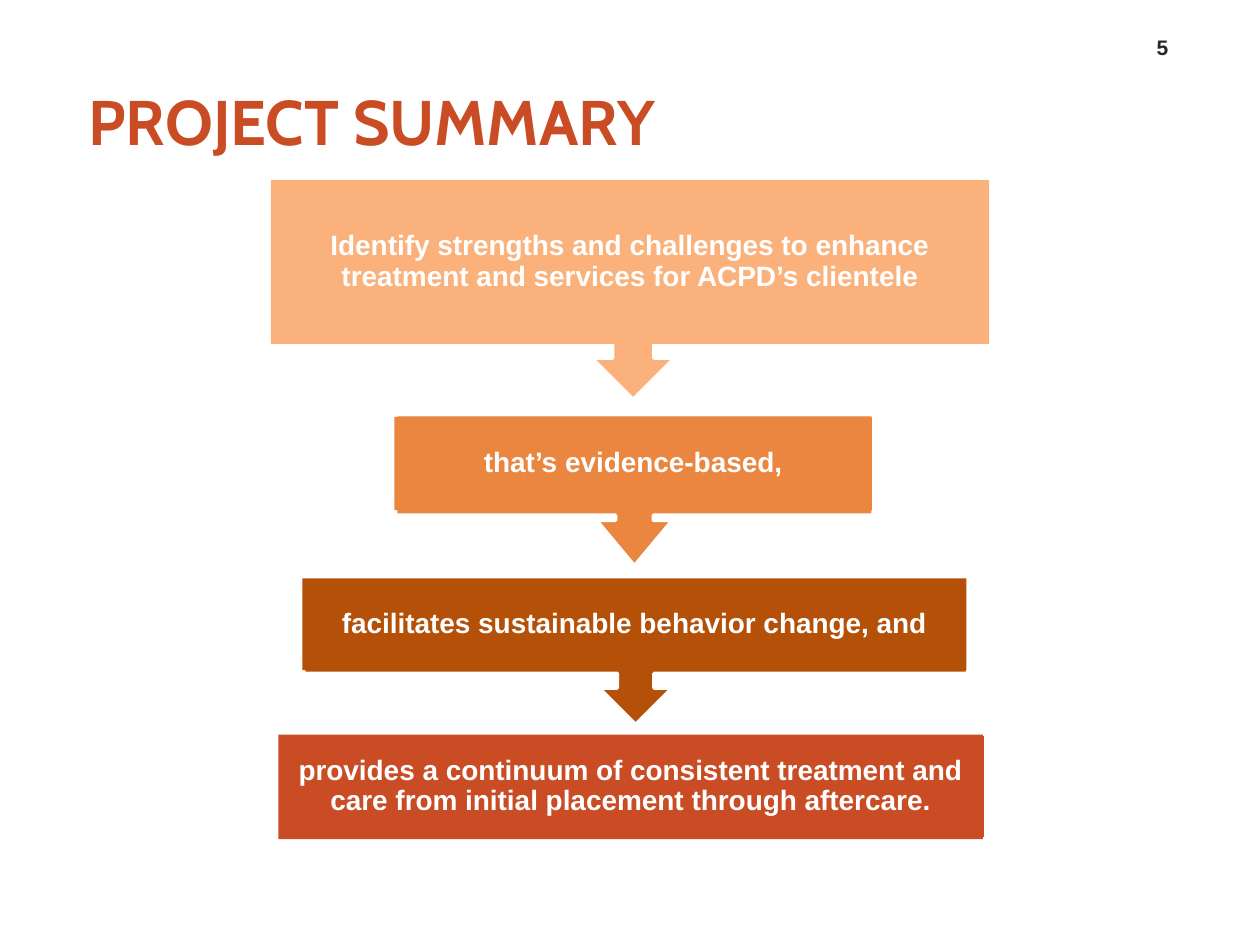
from pptx import Presentation
from pptx.dml.color import RGBColor
from pptx.enum import shapes, text
from pptx.util import Inches, Pt

STEPS = [
    ("provides a continuum of consistent treatment and care from initial placement through aftercare.",
     "C94C25", (2.21, 5.83, 5.59, 0.83), (2.3, 5.83, 5.52, 0.83), None),
    ("facilitates sustainable behavior change, and",
     "B45007", (2.4, 4.59, 5.27, 0.73), (2.41, 4.59, 5.27, 1.16), (0.25, 0.25, 0.25, 0.65)),
    ("that’s evidence-based,",
     "EA8640", (3.13, 3.31, 3.79, 0.74), (3.14, 3.29, 3.79, 1.2), (0.25, 0.25, 0.3, 0.665)),
    ("Identify strengths and challenges to enhance treatment and services for ACPD’s clientele",
     "FAB17B", (2.15, 1.43, 5.7, 1.3), (2.57, 1.86, 4.91, 1.31), (0.25, 0.25, 0.25, 0.65)),
]


def rgb(color):
    """Turn a hex string into a colour."""
    return RGBColor.from_string(color)


def write(sp, words, size, font, color, align, anchor, insets):
    """Fill a shape with one bold paragraph and return it."""
    tf = sp.text_frame
    tf.word_wrap = True
    tf.vertical_anchor = anchor
    tf.margin_left = tf.margin_right = Inches(insets[0])
    tf.margin_top = tf.margin_bottom = Inches(insets[1])
    p = tf.paragraphs[0]
    p.text = words
    p.alignment = align
    p.font.size, p.font.name, p.font.bold = Pt(size), font, True
    p.font.color.rgb = rgb(color)
    return p


def add_label(s, box, *style):
    """Add a text box with one paragraph."""
    sp = s.shapes.add_textbox(*map(Inches, box))
    write(sp, *style)


def add_block(s, kind, box, fill, line=None):
    """Add a filled shape, outlined only when a line colour is given."""
    sp = s.shapes.add_shape(kind, *map(Inches, box))
    sp.shadow.inherit = False
    sp.fill.solid()
    sp.fill.fore_color.rgb = rgb(fill)
    if line:
        sp.line.color.rgb = rgb(line)
        sp.line.width = Pt(2)
    else:
        sp.line.fill.background()
    return sp


def add_step(s, words, fill, box, back, adjustments):
    """Add a step: a backing box or downward callout, and its text panel."""
    kinds = shapes.MSO_SHAPE
    kind = kinds.UP_ARROW_CALLOUT if adjustments else kinds.RECTANGLE
    sp = add_block(s, kind, back, fill, "FFFFFF")
    if adjustments:
        sp.rotation = 180
        for i, value in enumerate(adjustments):
            sp.adjustments[i] = value
    panel = add_block(s, kinds.RECTANGLE, box, fill)
    p = write(panel, words, 16, "Arial", "FFFFFF", text.PP_ALIGN.CENTER,
              text.MSO_ANCHOR.MIDDLE, (0.12, 0.12))
    p.line_spacing = 0.9


def main():
    """Build the project summary slide."""
    prs = Presentation()
    prs.slide_width, prs.slide_height = Inches(10), Inches(7.5)
    s = prs.slides.add_slide(prs.slide_layouts[6])
    add_label(s, (0.5, 0.52, 5.42, 0.87), "PROJECT SUMMARY", 36, "Cabin", "C94C25",
              text.PP_ALIGN.LEFT, text.MSO_ANCHOR.MIDDLE, (0.2, 0.05))
    add_label(s, (8.95, 0.19, 0.55, 0.33), "5", 12, "Arial", "262626",
              text.PP_ALIGN.CENTER, text.MSO_ANCHOR.BOTTOM, (0.1, 0.05))
    for step in STEPS:
        add_step(s, *step)
    prs.save("out.pptx")


if __name__ == "__main__":
    main()
